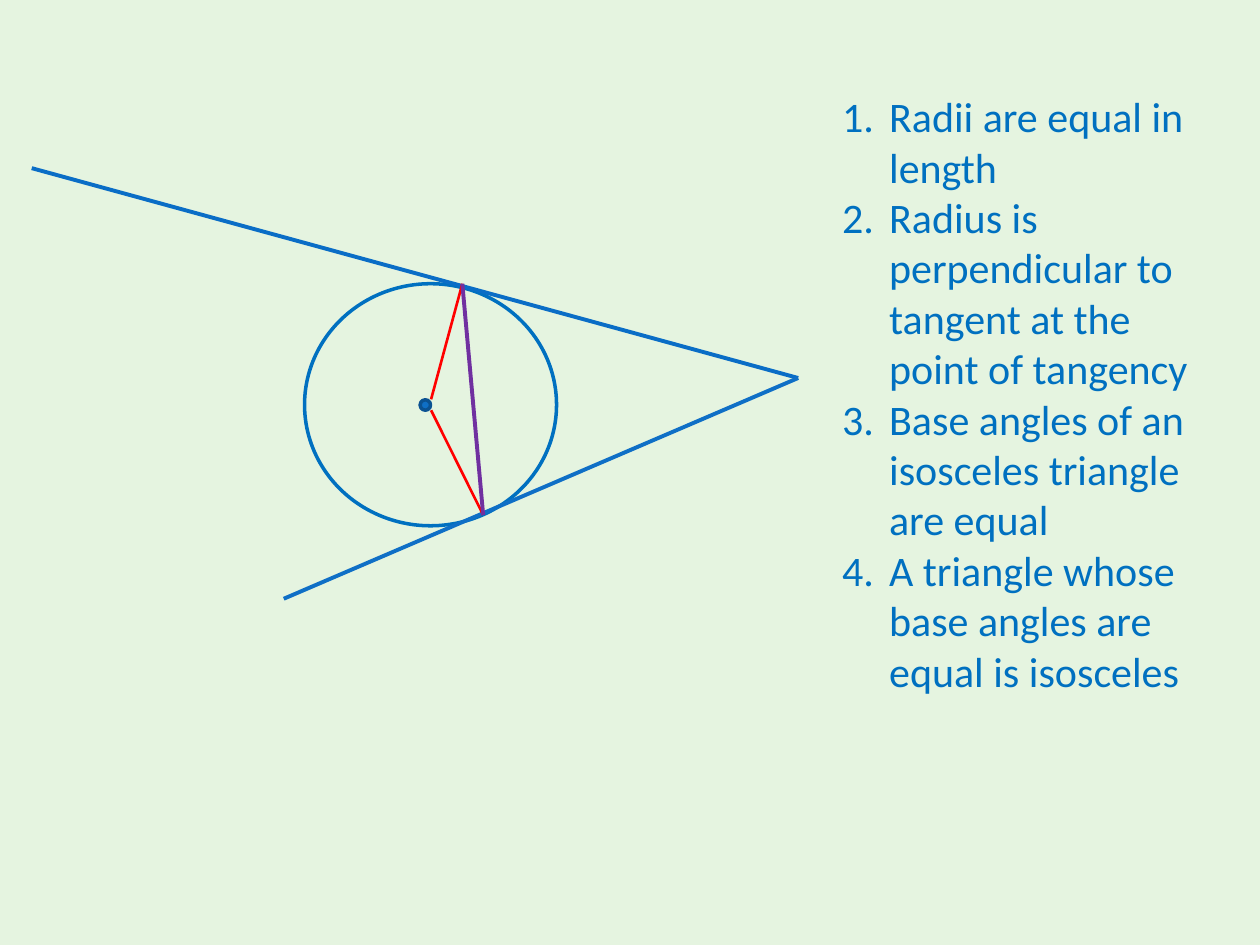
import pptx
import pptx.dml.color
import pptx.enum.shapes
import pptx.enum.text
import pptx.oxml.ns
import pptx.util
import lxml.etree

BLUE = "0070C0"
TANGENT_BLUE = "0F6FC6"
RADIUS_RED = "FF0000"
CHORD_PURPLE = "7030A0"
REASONS = [
    "Radii are equal in length",
    "Radius is perpendicular to tangent at the point of tangency",
    "Base angles of an isosceles triangle are equal",
    "A triangle whose base angles are equal is isosceles",
]


def set_color(color_format, value):
    """Apply a hex colour to a fill or font colour."""
    color_format.rgb = pptx.dml.color.RGBColor.from_string(value)


def add_child(parent, tag, **attributes):
    """Append a DrawingML element to a parent element."""
    return lxml.etree.SubElement(parent, pptx.oxml.ns.qn(tag), attributes)


def format_line(line, color, width):
    """Set the colour and the width in points of a line."""
    line.fill.solid()
    set_color(line.fill.fore_color, color)
    line.width = pptx.util.Pt(width)


def add_ellipse(slide, left, top, width, height, line_color, fill_color=None):
    """Add an outlined ellipse, filled only if a fill colour is given."""
    shape = slide.shapes.add_shape(
        pptx.enum.shapes.MSO_SHAPE.OVAL,
        *(pptx.util.Cm(length) for length in (left, top, width, height)))
    shape.shadow.inherit = False
    format_line(shape.line, line_color, 2)
    if fill_color:
        shape.fill.solid()
        set_color(shape.fill.fore_color, fill_color)
    else:
        shape.fill.background()


def add_segment(slide, start, end, color, width):
    """Add a straight line between two points in centimetres."""
    connector = slide.shapes.add_connector(
        pptx.enum.shapes.MSO_CONNECTOR.STRAIGHT,
        *(pptx.util.Cm(length) for length in (*start, *end)))
    format_line(connector.line, color, width)
    add_child(connector._element.spPr, "a:effectLst")


def add_text(paragraph, text, font="Calibri", size=24, color=BLUE):
    """Add a formatted run of text to a paragraph."""
    run = paragraph.add_run()
    run.text = text
    run.font.name = font
    run.font.size = pptx.util.Pt(size)
    set_color(run.font.color, color)


def number_paragraph(paragraph, indent):
    """Give a paragraph a hanging number and no extra spacing."""
    paragraph.space_before = pptx.util.Pt(0)
    properties = paragraph._p.get_or_add_pPr()
    properties.set("marL", str(pptx.util.Cm(indent)))
    properties.set("indent", str(-pptx.util.Cm(indent)))
    add_child(properties, "a:buFont", typeface="+mj-lt")
    add_child(properties, "a:buAutoNum", type="arabicPeriod")


def build_diagram(slide, left, top, width, height):
    """Draw a circle with two tangents, two radii and a chord."""
    def point(x, y):
        return left + x, top + y

    apex = point(width, 4.23)
    upper_contact = point(8.68, 2.33)
    lower_contact = point(9.1, 6.99)
    add_ellipse(slide, *point(5.5, 2.33), 5.08, 4.88, BLUE)
    add_segment(slide, apex, point(0, 0), "0A6DC6", 2.25)
    add_segment(slide, apex, point(5.08, height), TANGENT_BLUE, 2.25)
    add_segment(slide, upper_contact, point(8.05, 4.66), RADIUS_RED, 1.5)
    add_segment(slide, point(8.05, 4.88), lower_contact, RADIUS_RED, 1.5)
    add_ellipse(slide, *point(7.83, 4.67), 0.21, 0.21, "0B5292", TANGENT_BLUE)
    add_segment(slide, upper_contact, lower_contact, CHORD_PURPLE, 2.25)


def build_reasons(slide, left, top, width, height):
    """Place the numbered reasons in the body placeholder."""
    body = slide.placeholders[1]
    body.left, body.top, body.width, body.height = (
        pptx.util.Cm(length) for length in (left, top, width, height))
    text_frame = body.text_frame
    text_frame.word_wrap = True
    text_frame.auto_size = pptx.enum.text.MSO_AUTO_SIZE.SHAPE_TO_FIT_TEXT
    for index, reason in enumerate(REASONS):
        paragraph = text_frame.add_paragraph() if index else text_frame.paragraphs[0]
        number_paragraph(paragraph, indent=0.95)
        add_text(paragraph, reason)


def main():
    """Build and save the presentation."""
    presentation = pptx.Presentation()
    presentation.slide_width = pptx.util.Cm(25.4)
    presentation.slide_height = pptx.util.Cm(19.05)
    slide = presentation.slides.add_slide(presentation.slide_layouts[1])
    title = slide.shapes.title._element
    title.getparent().remove(title)
    slide.background.fill.solid()
    set_color(slide.background.fill.fore_color, "E5F4E0")
    build_diagram(slide, 0.64, 3.39, 15.45, 8.68)
    build_reasons(slide, 16.72, 1.7, 7.62, 12.57)
    presentation.save("out.pptx")


if __name__ == "__main__":
    main()
